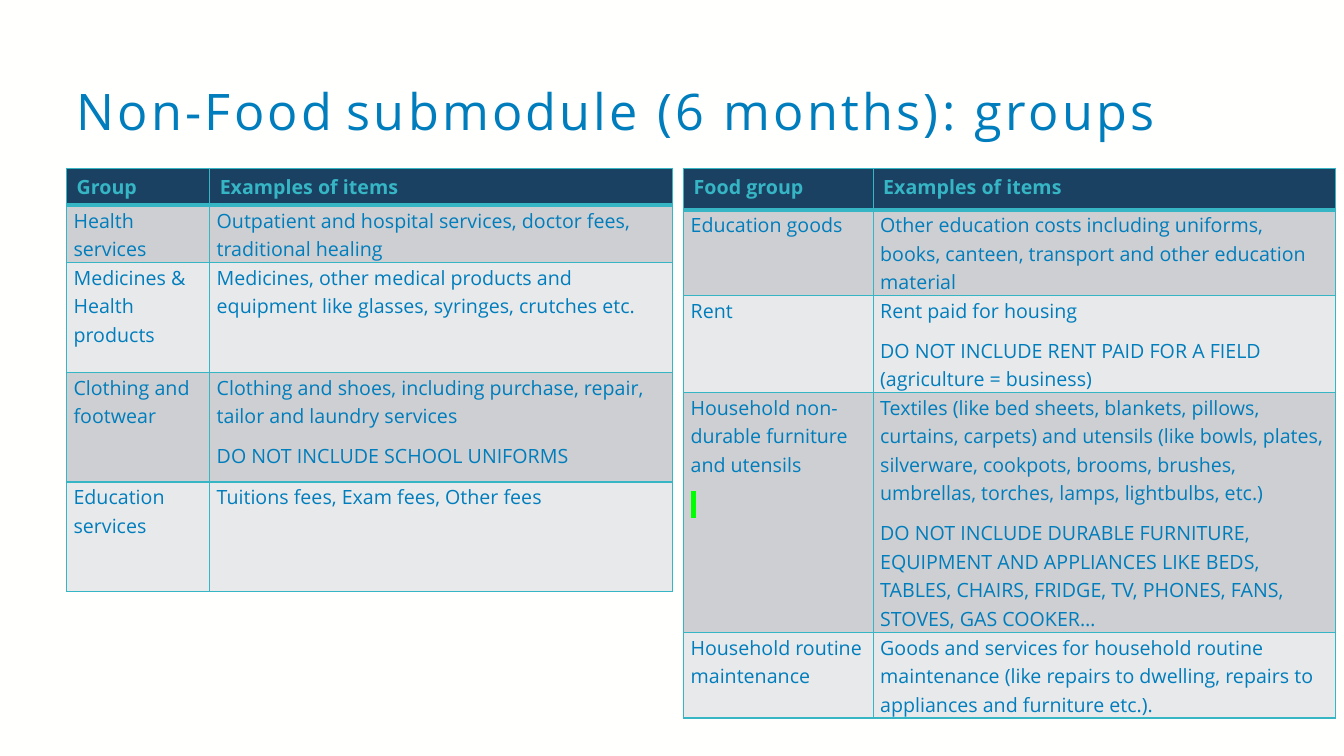
from lxml.etree import SubElement
from pptx import Presentation
from pptx.dml.color import RGBColor
from pptx.enum.text import MSO_ANCHOR as Anchor, MSO_AUTO_SIZE as AutoSize, PP_ALIGN as Align
from pptx.oxml import parse_xml
from pptx.oxml.ns import nsdecls, qn
from pptx.util import Inches, Pt

BACKGROUND = RGBColor(0xFF, 0xFF, 0xFE)
BLUE = RGBColor(0x00, 0x7D, 0xBC)
DEEP_BLUE = RGBColor(0x00, 0x70, 0xBA)
TEAL = RGBColor(0x36, 0xB5, 0xC5)
NAVY = RGBColor(0x1A, 0x41, 0x61)
BANDS = (RGBColor(0xCD, 0xCF, 0xD2), RGBColor(0xE8, 0xE9, 0xEA))
GREEN = RGBColor(0x00, 0xFF, 0x00)

FONT = "Open Sans"
GRID_COLUMNS, GRID_ROWS = 133.3, 75
HEADER_FONT = {"name": FONT, "size": Pt(14), "bold": True}
BODY_FONT = {"name": FONT, "size": Pt(14), "bold": False}
TITLE_FONT = {"name": FONT, "size": Pt(36), "bold": False}
GAP_FONT = {"name": FONT, "size": Pt(30), "bold": True}
BODY_PARAGRAPH = {"line_spacing": 1.07, "space_after": Pt(8), "alignment": Align.LEFT}
BODY_MARGINS = {"margin_left": Inches(0.07), "margin_right": Inches(0.07),
                "margin_top": 0, "margin_bottom": 0}
HIGHLIGHTED = " "

TITLE_RUNS = [
    ("Non-Food", TITLE_FONT, BLUE, 2.3),
    (" ", GAP_FONT, DEEP_BLUE, 0),
    ("submodule (6 months): groups", TITLE_FONT, BLUE, 2.3),
]
SERVICE_GROUPS = [
    (["Group"], ["Examples of items"]),
    (["Health services"],
     ["Outpatient and hospital services, doctor fees, traditional healing"]),
    (["Medicines & Health products"],
     ["Medicines, other medical products and equipment like glasses, syringes, crutches etc."]),
    (["Clothing and footwear"],
     ["Clothing and shoes, including purchase, repair, tailor and laundry services",
      "DO NOT INCLUDE SCHOOL UNIFORMS"]),
    (["Education services"], ["Tuitions fees, Exam fees, Other fees"]),
]
HOUSEHOLD_GROUPS = [
    (["Food group"], ["Examples of items"]),
    (["Education goods"],
     ["Other education costs including uniforms, books, canteen, transport "
      "and other education material"]),
    (["Rent"],
     ["Rent paid for housing",
      "DO NOT INCLUDE RENT PAID FOR A FIELD (agriculture = business)"]),
    (["Household non-durable furniture and utensils", HIGHLIGHTED],
     ["Textiles (like bed sheets, blankets, pillows, curtains, carpets) and utensils "
      "(like bowls, plates, silverware, cookpots, brooms, brushes, umbrellas, torches, "
      "lamps, lightbulbs, etc.)  ",
      "DO NOT INCLUDE DURABLE FURNITURE, EQUIPMENT AND APPLIANCES LIKE BEDS, TABLES, "
      "CHAIRS, FRIDGE, TV, PHONES, FANS, STOVES, GAS COOKER…"]),
    (["Household routine maintenance"],
     ["Goods and services for household routine maintenance (like repairs to dwelling, "
      "repairs to appliances and furniture etc.)."]),
]


def apply(target, values):
    for name, value in values.items():
        setattr(target, name, value)


def highlight(run, color):
    """Put a marker colour behind a run; it must precede the font element."""
    element = parse_xml(f'<a:highlight {nsdecls("a")}><a:srgbClr val="{color}"/></a:highlight>')
    run.font._element.find(qn("a:latin")).addprevious(element)


def draw_borders(cell, top, bottom):
    """Draw all four cell edges, with widths in points."""
    properties = cell._tc.get_or_add_tcPr()
    for position, (side, width) in enumerate(
            {"L": 1, "R": 1, "T": top, "B": bottom}.items()):
        line = SubElement(properties, qn(f"a:ln{side}"), w=str(Pt(width)))
        fill = SubElement(line, qn("a:solidFill"))
        SubElement(fill, qn("a:srgbClr"), val=str(TEAL))
        properties.insert(position, line)


class SlideBuilder:
    """Places elements on a slide, in grid cells of a tenth of an inch."""

    def __init__(self, presentation):
        self.column = presentation.slide_width / GRID_COLUMNS
        self.row = presentation.slide_height / GRID_ROWS
        self.slide = presentation.slides.add_slide(presentation.slide_layouts[5])
        fill = self.slide.background.fill
        fill.solid()
        fill.fore_color.rgb = BACKGROUND

    def across(self, columns):
        return round(columns * self.column)

    def down(self, rows):
        return round(rows * self.row)

    def add_run(self, paragraph, text, font, color):
        run = paragraph.add_run()
        run.text = text
        apply(run.font, font)
        run.font.color.rgb = color
        return run

    def title(self, left, top, width, height, runs):
        shape = self.slide.shapes.title
        apply(shape, {"left": self.across(left), "top": self.down(top),
                      "width": self.across(width), "height": self.down(height)})
        apply(shape.text_frame, {"vertical_anchor": Anchor.MIDDLE, "word_wrap": True,
                                 "auto_size": AutoSize.NONE})
        paragraph = shape.text_frame.paragraphs[0]
        apply(paragraph, {"alignment": Align.LEFT, "line_spacing": 0.9})
        for text, font, color, spacing in runs:
            run = self.add_run(paragraph, text, font, color)
            run.font._element.set("spc", str(round(spacing * 100)))

    def table(self, left, top, widths, heights, content):
        table = self.slide.shapes.add_table(
            len(content), len(widths), self.across(left), self.down(top),
            self.across(sum(widths)), self.down(sum(heights))).table
        table.horz_banding = False
        for column, width in zip(table.columns, widths):
            column.width = self.across(width)
        for index, (row, height) in enumerate(zip(table.rows, heights)):
            row.height = self.down(height)
            for cell, texts in zip(row.cells, content[index]):
                self.cell(cell, index, texts)

    def cell(self, cell, row_index, texts):
        header = row_index == 0
        cell.fill.solid()
        cell.fill.fore_color.rgb = NAVY if header else BANDS[(row_index - 1) % 2]
        draw_borders(cell, top=3 if row_index == 1 else 1, bottom=3 if header else 1)
        if not header:
            apply(cell, BODY_MARGINS)
        for index, text in enumerate(texts):
            frame = cell.text_frame
            paragraph = frame.add_paragraph() if index else frame.paragraphs[0]
            if header:
                self.add_run(paragraph, text, HEADER_FONT, TEAL)
                continue
            apply(paragraph, BODY_PARAGRAPH)
            run = self.add_run(paragraph, text, BODY_FONT, BLUE)
            if text == HIGHLIGHTED:
                highlight(run, GREEN)


def main():
    presentation = Presentation()
    apply(presentation, {"slide_width": Inches(13.33), "slide_height": Inches(7.5)})
    builder = SlideBuilder(presentation)
    builder.title(6.6, 5, 120.1, 12.6, TITLE_RUNS)
    builder.table(6.6, 16.7, [14.2, 45.9], [3.5, 5.3] + [10.9] * 3, SERVICE_GROUPS)
    builder.table(67.8, 16.7, [18.8, 45.9], [4.1] * 5, HOUSEHOLD_GROUPS)
    presentation.save("out.pptx")


if __name__ == "__main__":
    main()
